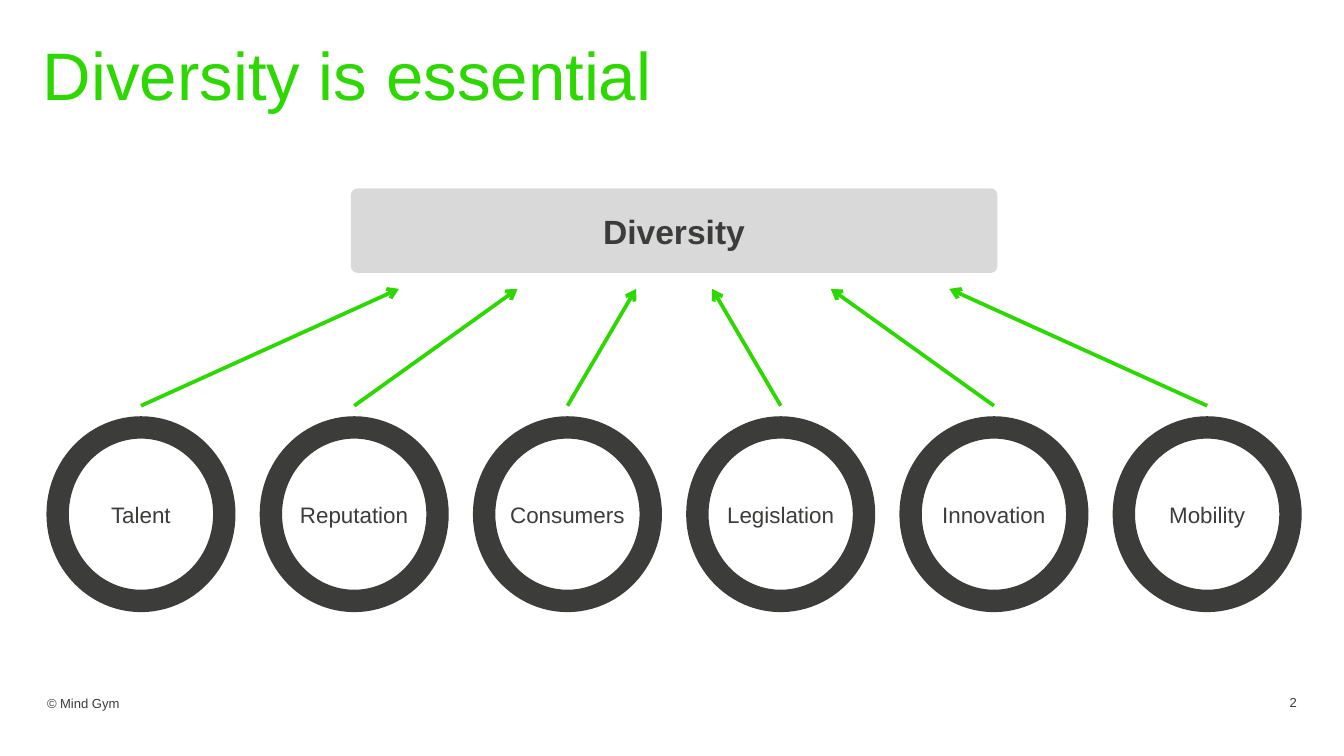
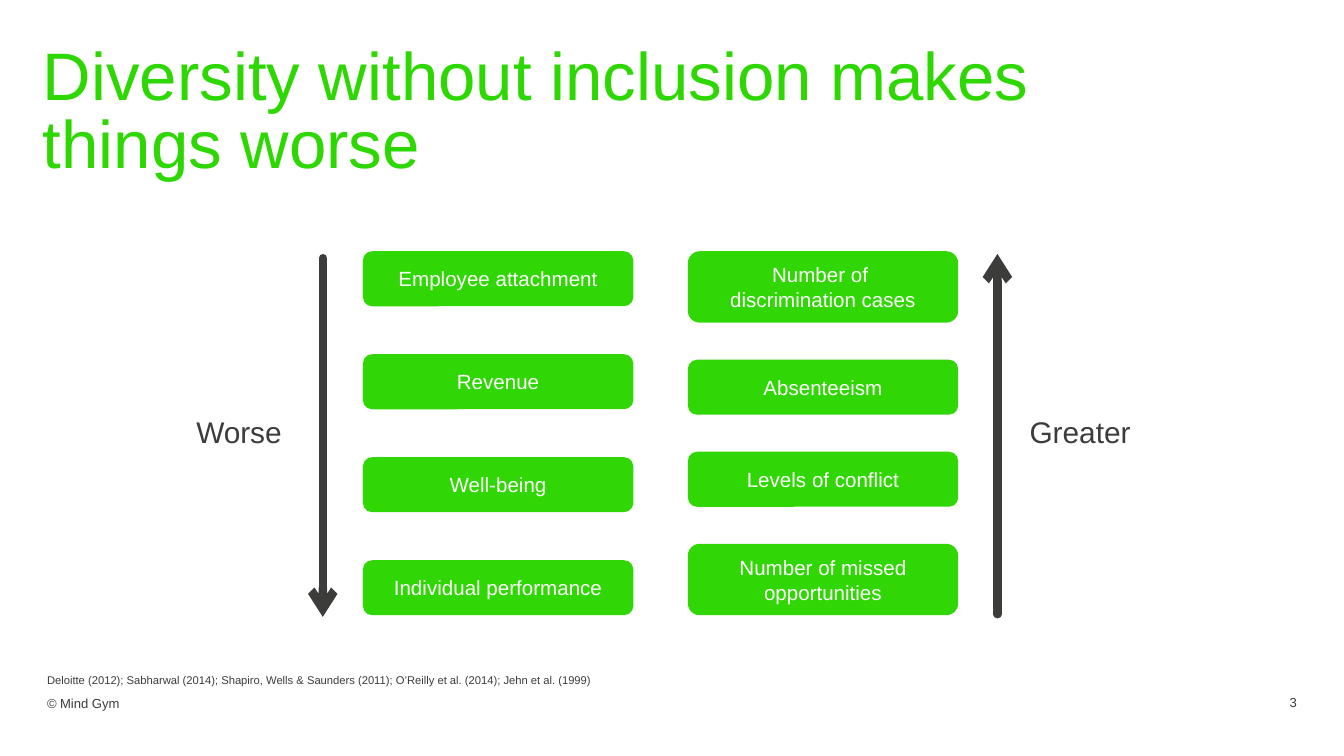
from dataclasses import dataclass

import pptx
import pptx.dml.color
import pptx.enum.shapes
import pptx.enum.text
import pptx.oxml
import pptx.oxml.ns
import pptx.shapes.base
import pptx.slide
import pptx.text.text
import pptx.util

Cm = pptx.util.Cm
Pt = pptx.util.Pt
Shape = pptx.enum.shapes.MSO_SHAPE
Align = pptx.enum.text.PP_ALIGN
Anchor = pptx.enum.text.MSO_ANCHOR
qn = pptx.oxml.ns.qn


@dataclass(frozen=True)
class Theme:
    font: str = "Arial"
    green: str = "2DD700"
    dark: str = "3C3C3B"
    grey: str = "D9D9D9"
    white: str = "FFFFFF"
    title: float = 36
    headline: float = 18
    label: float = 16
    circle: float = 12
    pill: float = 11
    footer: float = 7
    source: float = 6


@dataclass(frozen=True)
class Box:
    """Left, top, width and height in centimetres."""
    left: float
    top: float
    width: float
    height: float

    def lengths(self) -> tuple:
        return Cm(self.left), Cm(self.top), Cm(self.width), Cm(self.height)


@dataclass(frozen=True)
class Arrow:
    """Start and tip in centimetres, line width in points."""
    x1: float
    y1: float
    x2: float
    y2: float
    color: str
    weight: float
    cap: str = "flat"


@dataclass(frozen=True)
class Pill:
    text: str
    height: float = 1.04


@dataclass(frozen=True)
class Column:
    left: float
    pills: tuple[Pill, ...]


THEME = Theme()
NO_INSETS = (0, 0)
INSETS = (0.18, 0.1)
DEFAULT_INSETS = (0.25, 0.13)

CENTER = 12.74
CIRCLE_PITCH = 4.03
CIRCLE_TOP = 8.08
CIRCLE_SIZE = (3.15, 3.28)
TIP_START, TIP_PITCH = 0.72, 2.24
DRIVERS = ("Talent", "Reputation", "Consumers", "Legislation", "Innovation", "Mobility")

PILL_TOP, PILL_BOTTOM, PILL_WIDTH = 4.75, 11.63, 5.11
COLUMNS = (
    Column(6.86, (Pill("Employee attachment"), Pill("Revenue"),
                  Pill("Well-being"), Pill("Individual performance"))),
    Column(13.0, (Pill("Number of \vdiscrimination cases", 1.35), Pill("Absenteeism"),
                  Pill("Levels of conflict"),
                  Pill("Number of missed opportunities", 1.35))),
)
SOURCES = ("Deloitte (2012); Sabharwal (2014); Shapiro, Wells & Saunders (2011); "
           "O’Reilly et al. (2014); Jehn et al. (1999)")


def rgb(color: str) -> pptx.dml.color.RGBColor:
    return pptx.dml.color.RGBColor.from_string(color)


def write(tf: pptx.text.text.TextFrame, text: str, *, size: float,
          color: str = THEME.dark, bold: bool = False, align: Align = Align.LEFT,
          anchor: Anchor = Anchor.TOP, wrap: bool = True,
          insets: tuple[float, float] = NO_INSETS, leading: float | None = None) -> None:
    tf.text = text
    tf.auto_size = pptx.enum.text.MSO_AUTO_SIZE.NONE
    tf.word_wrap = wrap
    tf.vertical_anchor = anchor
    tf.margin_left = tf.margin_right = Cm(insets[0])
    tf.margin_top = tf.margin_bottom = Cm(insets[1])
    for p in tf.paragraphs:
        p.alignment = align
        if leading:
            p.line_spacing = Pt(leading)
        for r in p.runs:
            r.font.name = THEME.font
            r.font.size = Pt(size)
            r.font.bold = bold
            r.font.color.rgb = rgb(color)


def add_text(slide: pptx.slide.Slide, box: Box, text: str, **fmt) -> None:
    write(slide.shapes.add_textbox(*box.lengths()).text_frame, text, **fmt)


def add_block(shapes, kind: Shape, box: Box, text: str, *, fill: str | None = None,
              line: str | None = None, weight: float = 0, **fmt) -> pptx.shapes.base.BaseShape:
    """Add a preset shape with centred text."""
    sp = shapes.add_shape(kind, *box.lengths())
    sp.shadow.inherit = False
    if fill:
        sp.fill.solid()
        sp.fill.fore_color.rgb = rgb(fill)
    else:
        sp.fill.background()
    if line:
        sp.line.color.rgb = rgb(line)
        sp.line.width = Pt(weight)
    else:
        sp.line.fill.background()
    write(sp.text_frame, text, align=Align.CENTER, anchor=Anchor.MIDDLE, **fmt)
    return sp


def add_arrow(slide: pptx.slide.Slide, arrow: Arrow) -> None:
    cxn = slide.shapes.add_connector(
        pptx.enum.shapes.MSO_CONNECTOR.STRAIGHT,
        Cm(arrow.x1), Cm(arrow.y1), Cm(arrow.x2), Cm(arrow.y2))
    cxn.line.color.rgb = rgb(arrow.color)
    cxn.line.width = Pt(arrow.weight)
    ln = cxn.line._get_or_add_ln()
    ln.set("cap", arrow.cap)
    ln.append(pptx.oxml.parse_xml(
        '<a:tailEnd xmlns:a="http://schemas.openxmlformats.org/drawingml/2006/main" type="arrow"/>'))
    sp_pr = cxn._element.spPr
    sp_pr.append(sp_pr.makeelement(qn("a:effectLst"), {}))


def set_opacity(sp: pptx.shapes.base.BaseShape, percent: int) -> None:
    clr = sp._element.spPr.find(qn("a:solidFill")).find(qn("a:srgbClr"))
    clr.append(clr.makeelement(qn("a:alpha"), {"val": str(percent * 1000)}))


def add_slide(prs, title: str, number: int, title_width: float) -> pptx.slide.Slide:
    """Add a slide with its title, copyright line and page number."""
    slide = prs.slides.add_slide(prs.slide_layouts.get_by_name("Title Only"))
    sp = slide.shapes.title
    sp.left, sp.top, sp.width, sp.height = Box(0.81, 0.89, title_width, 1.45).lengths()
    write(sp.text_frame, title, size=THEME.title, color=THEME.green, leading=36)
    add_text(slide, Box(23.8, 13.13, 0.71, 0.3), str(number),
             size=THEME.footer, align=Align.RIGHT)
    add_text(slide, Box(0.89, 13.13, 8.05, 0.48), "© Mind Gym",
             size=THEME.footer, leading=9)
    return slide


def build_drivers(prs) -> None:
    slide = add_slide(prs, "Diversity is essential", 2, 23.62)
    headline = add_block(slide.shapes, Shape.ROUNDED_RECTANGLE,
                         Box(CENTER - 6.11, 3.56, 12.22, 1.6), "Diversity", fill=THEME.grey,
                         size=THEME.headline, bold=True, wrap=False, insets=INSETS)
    headline.adjustments[0] = 0.08
    circles = slide.shapes.add_group_shape()
    width, height = CIRCLE_SIZE
    for i, driver in enumerate(DRIVERS):
        step = i - (len(DRIVERS) - 1) / 2
        x = CENTER + step * CIRCLE_PITCH
        add_block(circles.shapes, Shape.OVAL, Box(x - width / 2, CIRCLE_TOP, width, height),
                  driver, line=THEME.dark, weight=12, size=THEME.circle,
                  wrap=False, insets=DEFAULT_INSETS)
        reach = TIP_START + (abs(step) - 0.5) * TIP_PITCH
        tip = CENTER + (reach if step > 0 else -reach)
        add_arrow(slide, Arrow(x, 7.67, tip, 5.46, THEME.green, 2))


def build_effects(prs) -> None:
    slide = add_slide(prs, "Diversity without inclusion makes things worse", 3, 20.4)
    for arrow in (Arrow(18.85, 11.61, 18.85, 4.8, THEME.dark, 4.5, "rnd"),
                  Arrow(6.1, 4.88, 6.1, 11.66, THEME.dark, 4.5, "rnd")):
        add_arrow(slide, arrow)
    for left, label in ((3.71, "Worse"), (19.46, "Greater")):
        add_text(slide, Box(left, 7.82, 4.65, 0.76), label, size=THEME.label)
    for column in COLUMNS:
        used = sum(pill.height for pill in column.pills)
        gap = (PILL_BOTTOM - PILL_TOP - used) / (len(column.pills) - 1)
        top = PILL_TOP
        for pill in column.pills:
            sp = add_block(slide.shapes, Shape.ROUNDED_RECTANGLE,
                           Box(column.left, top, PILL_WIDTH, pill.height), pill.text,
                           fill=THEME.green, size=THEME.pill, color=THEME.white, insets=INSETS)
            set_opacity(sp, 98)
            top += pill.height + gap
    add_text(slide, Box(0.71, 12.62, 18.85, 0.46), SOURCES, size=THEME.source, insets=INSETS)


def main() -> None:
    prs = pptx.Presentation()
    prs.slide_width, prs.slide_height = Cm(25.4), Cm(14.29)
    build_drivers(prs)
    build_effects(prs)
    prs.save("out.pptx")


if __name__ == "__main__":
    main()
